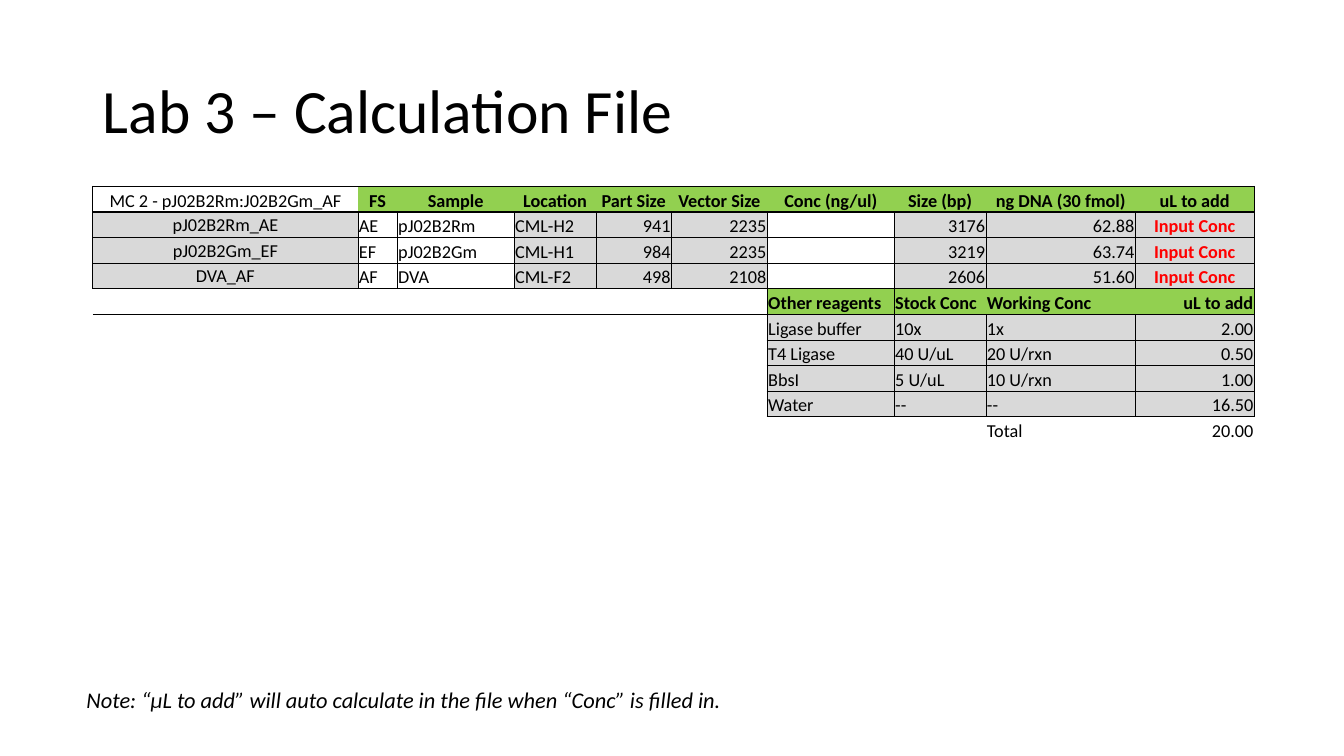
from lxml.etree import SubElement
from pptx import Presentation
from pptx.dml.color import RGBColor
from pptx.enum.text import MSO_ANCHOR, PP_ALIGN
from pptx.oxml.ns import qn
from pptx.util import Inches, Pt

COLORS = {"ink": "000000", "head": "92D050", "body": "D9D9D9", "alert": "FF0000"}
ALIGN = {"l": PP_ALIGN.LEFT, "c": PP_ALIGN.CENTER, "r": PP_ALIGN.RIGHT}
PLAIN = "{2D5ABB26-0587-4C30-8999-92F81FD0307C}"
SIZE = 13
WIDTHS = [2.63, 0.39, 1.16, 0.81, 0.75, 0.95, 1.26, 0.91, 1.48, 1.18]
PARTS = [
    ["MC 2 - pJ02B2Rm:J02B2Gm_AF", "FS", "Sample", "Location", "Part Size",
     "Vector Size", "Conc (ng/ul)", "Size (bp)", "ng DNA (30 fmol)", "uL to add"],
    ["pJ02B2Rm_AE", "AE", "pJ02B2Rm", "CML-H2", "941", "2235", "", "3176", "62.88", "Input Conc"],
    ["pJ02B2Gm_EF", "EF", "pJ02B2Gm", "CML-H1", "984", "2235", "", "3219", "63.74", "Input Conc"],
    ["DVA_AF", "AF", "DVA", "CML-F2", "498", "2108", "", "2606", "51.60", "Input Conc"],
]
MIXES = [
    ["Other reagents", "Stock Conc", "Working Conc", "uL to add"],
    ["Ligase buffer", "10x", "1x", "2.00"],
    ["T4 Ligase", "40 U/uL", "20 U/rxn", "0.50"],
    ["BbsI", "5 U/uL", "10 U/rxn", "1.00"],
    ["Water", "--", "--", "16.50"],
]
TOTAL = ["Total", "20.00"]
OPEN = (1, 2, 6)  # columns left white for the parts
ROWS = len(PARTS) + len(MIXES) + 1
COLS = len(WIDTHS)


def write(frame, text, size=SIZE, color="ink", bold=False, italic=False, align="l", lead=None):
    para = frame.paragraphs[0]
    para.alignment = ALIGN[align]
    para.line_spacing = lead
    run = para.add_run()
    run.text = text
    font = run.font
    font.name, font.size = "Calibri", Pt(size)
    font.bold, font.italic = bold, italic
    font.color.rgb = RGBColor.from_string(COLORS[color])


def label(slide, box, text, anchor=MSO_ANCHOR.TOP, **style):
    frame = slide.shapes.add_textbox(*map(Inches, box)).text_frame
    frame.word_wrap = True
    frame.vertical_anchor = anchor
    write(frame, text, **style)


def rule(lines, top, left, rows, cols):
    """Note the borders of a block: heavy round it and its header, thin inside."""
    for r in range(rows):
        for c in range(cols):
            row, col = top + r, left + c
            sides = {
                "T": 1 if r < 2 else 0.5,
                "B": 1 if r in (0, rows - 1) else 0.5,
                "L": 1 if c == 0 else 0.5 if r else 0,
                "R": 1 if c == cols - 1 else 0.5 if r else 0,
            }
            if (row, col) == (0, 0):
                sides["R"] = 0
            near = {"T": (row - 1, col, "B"), "B": (row + 1, col, "T"),
                    "L": (row, col - 1, "R"), "R": (row, col + 1, "L")}
            for side, width in sides.items():
                if width:
                    lines[row, col, side] = width
                    lines[near[side]] = width


def draw(cell, row, col, lines):
    props = cell._tc.get_or_add_tcPr()
    for side in "LRTB":
        width = lines.get((row, col, side))
        if width:
            line = SubElement(props, qn("a:ln" + side), w=str(Pt(width)))
            fill = SubElement(line, qn("a:solidFill"))
            SubElement(fill, qn("a:srgbClr"), val=COLORS["ink"])


def paint(cell, name):
    if name:
        cell.fill.solid()
        cell.fill.fore_color.rgb = RGBColor.from_string(COLORS[name])
    else:
        cell.fill.background()


def look(row, col):
    """Return the text, fill and text style of a cell."""
    if row < len(PARTS):
        text = PARTS[row][col]
        if row == 0:
            return text, "head" if col else None, {"align": "c", "bold": col > 0}
        style = {"align": "c" if col in (0, 9) else "l" if col < 4 else "r"}
        if col == 9:
            style.update(color="alert", bold=True)
        return text, None if col in OPEN else "body", style
    r, c = row - len(PARTS), col - COLS + len(MIXES[0])
    align = "r" if col == COLS - 1 else "l"
    if c >= 0 and r < len(MIXES):
        return MIXES[r][c], "body" if r else "head", {"align": align, "bold": r == 0}
    if c >= 2:
        return TOTAL[c - 2], None, {"align": align}
    return "", None, {}


def sheet(slide, box):
    frame = slide.shapes.add_table(ROWS, COLS, *map(Inches, box))
    table = frame.table
    table.first_row = table.horz_banding = False
    table._tbl.tblPr.find(qn("a:tableStyleId")).text = PLAIN
    for col, width in zip(table.columns, WIDTHS):
        col.width = Inches(width)
    lines = {}
    rule(lines, 0, 0, len(PARTS), COLS)
    rule(lines, len(PARTS), COLS - len(MIXES[0]), len(MIXES), len(MIXES[0]))
    for row in range(ROWS):
        for col in range(COLS):
            cell = table.cell(row, col)
            cell.margin_left = cell.margin_right = cell.margin_top = Inches(0.01)
            cell.margin_bottom = 0
            name = col == 0 and 0 < row < len(PARTS)
            cell.vertical_anchor = MSO_ANCHOR.MIDDLE if name else MSO_ANCHOR.BOTTOM
            draw(cell, row, col, lines)
            text, fill, style = look(row, col)
            paint(cell, fill)
            if text:
                write(cell.text_frame, text, **style)
            else:
                para = cell.text_frame.paragraphs[0]._p
                SubElement(para, qn("a:endParaRPr"), sz=str(SIZE * 100))


def main():
    deck = Presentation()
    deck.slide_width, deck.slide_height = Inches(13.33), Inches(7.5)
    slide = deck.slides.add_slide(deck.slide_layouts[6])
    label(slide, (0.92, 0.4, 11.5, 1.45), "Lab 3 – Calculation File",
          anchor=MSO_ANCHOR.MIDDLE, size=44, lead=0.9)
    sheet(slide, (0.92, 1.85, 11.52, 2.54))
    label(slide, (0.76, 6.76, 8.3, 0.37),
          "Note: “µL to add” will auto calculate in the file when “Conc” is filled in.",
          size=16, italic=True)
    deck.save("out.pptx")


if __name__ == "__main__":
    main()
